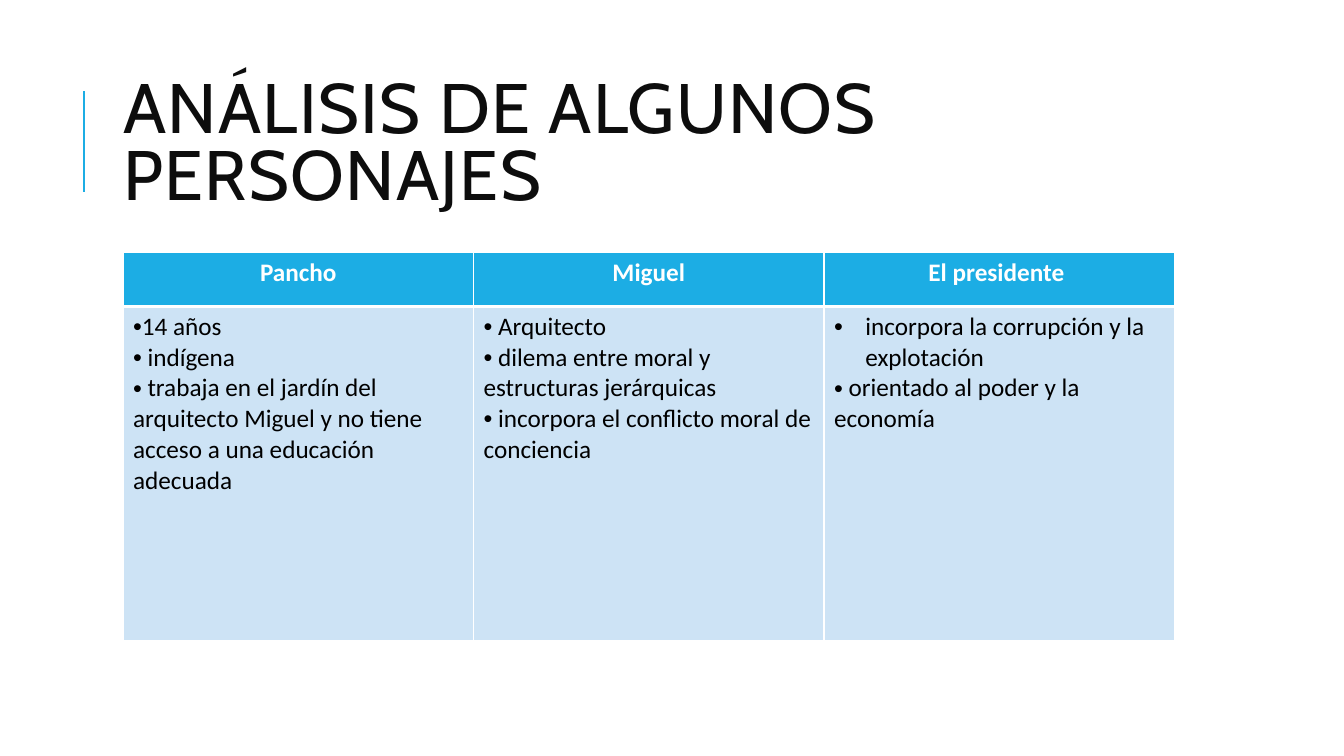
from lxml import etree
from pptx import Presentation
from pptx.dml.color import RGBColor
from pptx.enum.shapes import MSO_CONNECTOR
from pptx.enum.text import MSO_ANCHOR, MSO_AUTO_SIZE, PP_ALIGN
from pptx.oxml.ns import qn
from pptx.util import Inches, Pt

STRAIGHT = MSO_CONNECTOR.STRAIGHT
MIDDLE = MSO_ANCHOR.MIDDLE
NO_AUTOFIT = MSO_AUTO_SIZE.NONE
LEFT, CENTER = PP_ALIGN.LEFT, PP_ALIGN.CENTER

ACCENT = RGBColor(0x1C, 0xAD, 0xE4)
PALE_BLUE = RGBColor(0xCD, 0xE3, 0xF5)
INK = RGBColor(0x0D, 0x0D, 0x0D)
BLACK = RGBColor(0, 0, 0)
WHITE = RGBColor(0xFF, 0xFF, 0xFF)

TITLE_FONT = {"name": "Cabin", "size": Pt(50), "bold": False}
HEADER_FONT = {"name": "Calibri", "size": Pt(18), "bold": True}
TRAIT_FONT = {**HEADER_FONT, "bold": False}

HANGING = Inches(0.31)

# Each character: name, then traits as (text, hanging indent)
CHARACTERS = [
    ("Pancho", [
        ("14 años", 0),
        (" indígena", 0),
        (" trabaja en el jardín del arquitecto Miguel y no tiene acceso "
         "a una educación adecuada", 0),
    ]),
    ("Miguel", [
        (" Arquitecto", 0),
        (" dilema entre moral y estructuras jerárquicas", 0),
        (" incorpora el conflicto moral de conciencia", 0),
    ]),
    ("El presidente ", [
        ("incorpora la corrupción y la explotación", HANGING),
        (" orientado al poder y la economía", 0),
    ]),
]


def add_run(paragraph, text, font_format, color):
    run = paragraph.add_run()
    run.text = text
    for attribute, value in font_format.items():
        setattr(run.font, attribute, value)
    run.font.color.rgb = color
    return run


def add_title(slide, text):
    title = slide.shapes.title
    title.left, title.top = Inches(1.12), Inches(0.64)
    title.width, title.height = Inches(10.63), Inches(1.64)
    frame = title.text_frame
    frame.auto_size = NO_AUTOFIT
    frame.word_wrap = True
    frame.vertical_anchor = MIDDLE
    heading = frame.paragraphs[0]
    heading.alignment = LEFT
    heading.line_spacing = 0.8
    run = add_run(heading, text, TITLE_FONT, INK)
    run.font._element.set("spc", "100")


def add_accent_line(slide):
    accent = slide.shapes.add_connector(
        STRAIGHT, Inches(0.83), Inches(1.9), Inches(0.83), Inches(0.9))
    accent.line.color.rgb = ACCENT
    accent.line.width = Pt(1.5)
    etree.SubElement(accent._element.spPr, qn("a:effectLst"))


def style_cell(cell, fill, top, bottom):
    """Draw white borders, then fill the cell."""
    properties = cell._tc.get_or_add_tcPr()
    widths = {"a:lnL": 1, "a:lnR": 1, "a:lnT": top, "a:lnB": bottom}
    for side, width in widths.items():
        border = etree.SubElement(properties, qn(side), w=str(Pt(width)))
        solid = etree.SubElement(border, qn("a:solidFill"))
        etree.SubElement(solid, qn("a:srgbClr"), val=str(WHITE))
    cell.fill.solid()
    cell.fill.fore_color.rgb = fill


def add_bullet(paragraph, indent):
    properties = paragraph._p.get_or_add_pPr()
    properties.set("marL", str(indent))
    properties.set("indent", str(-indent))
    etree.SubElement(properties, qn("a:buFont"), typeface="Arial")
    etree.SubElement(properties, qn("a:buChar"), char="•")


def fill_traits(cell, traits):
    frame = cell.text_frame
    for index, (trait, indent) in enumerate(traits):
        paragraph = frame.add_paragraph() if index else frame.paragraphs[0]
        add_bullet(paragraph, indent)
        add_run(paragraph, trait, TRAIT_FONT, BLACK)


def add_character_table(slide):
    table = slide.shapes.add_table(
        2, len(CHARACTERS), Inches(1.22), Inches(2.5),
        Inches(10.43), Inches(3.86)).table
    table.horz_banding = False
    table.rows[0].height, table.rows[1].height = Inches(0.54), Inches(3.32)

    for column, (name, traits) in enumerate(CHARACTERS):
        header, body = table.cell(0, column), table.cell(1, column)
        style_cell(header, ACCENT, top=1, bottom=3)
        style_cell(body, PALE_BLUE, top=3, bottom=1)
        heading = header.text_frame.paragraphs[0]
        heading.alignment = CENTER
        add_run(heading, name, HEADER_FONT, WHITE)
        fill_traits(body, traits)


def main():
    deck = Presentation()
    deck.slide_width, deck.slide_height = Inches(13.33), Inches(7.5)
    slide = deck.slides.add_slide(deck.slide_layouts[5])

    # Heading
    add_accent_line(slide)
    add_title(slide, "ANÁLISIS DE ALGUNOS PERSONAJES")

    # Characters
    add_character_table(slide)

    deck.save("out.pptx")


if __name__ == "__main__":
    main()
